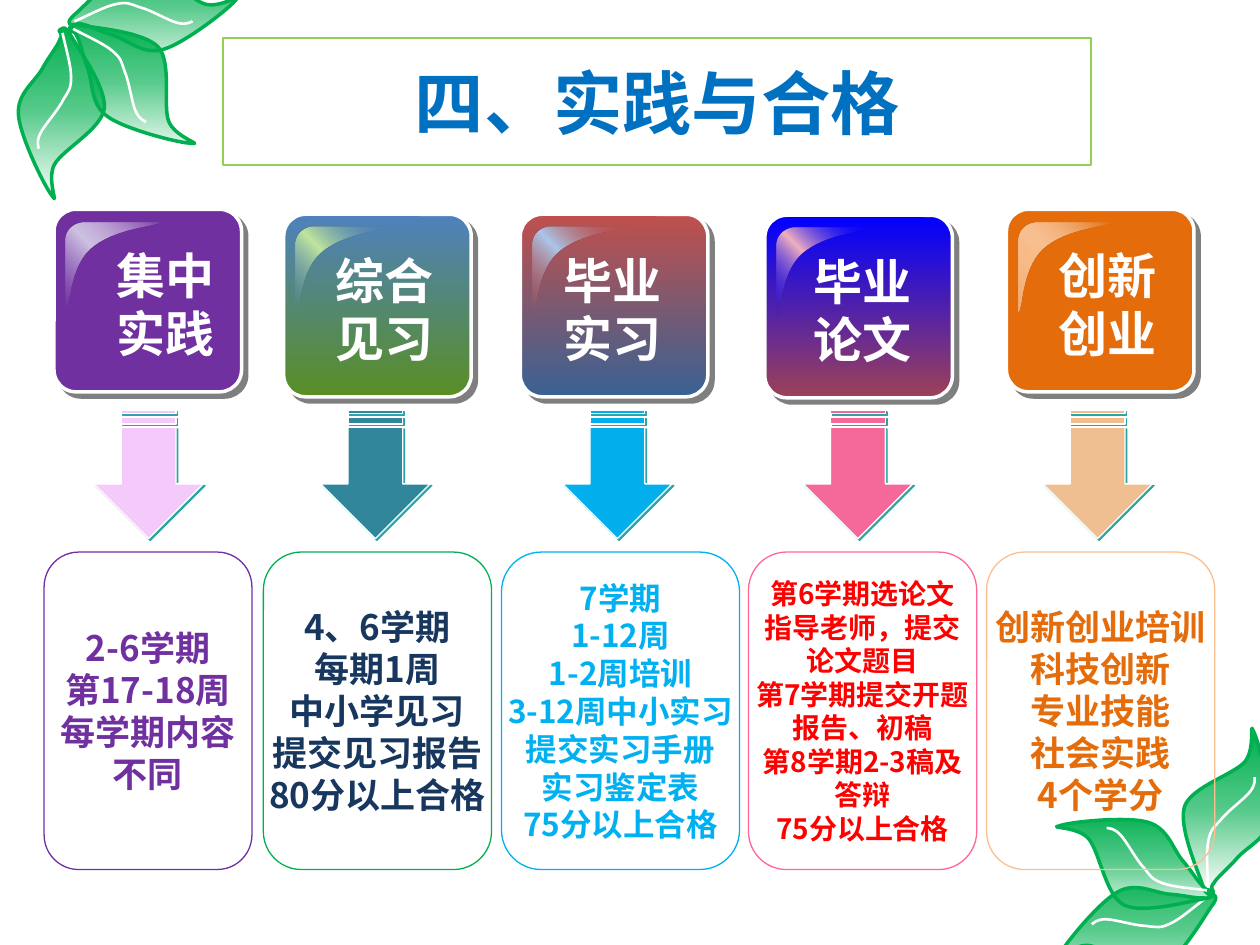
from dataclasses import dataclass
from typing import NamedTuple

import lxml.etree
import pptx
import pptx.dml.color
import pptx.enum.shapes
import pptx.enum.text
import pptx.oxml.ns
import pptx.util

Cm = pptx.util.Cm
Pt = pptx.util.Pt
RGBColor = pptx.dml.color.RGBColor
SHAPES = pptx.enum.shapes.MSO_SHAPE
qn = pptx.oxml.ns.qn

FONT = "Noto Sans CJK SC"
WHITE = RGBColor(0xFF, 0xFF, 0xFF)
BLACK = RGBColor(0x00, 0x00, 0x00)
GREEN = RGBColor(0x00, 0xB0, 0x50)
LIME = RGBColor(0x92, 0xD0, 0x50)
TITLE_BLUE = RGBColor(0x00, 0x70, 0xC0)
PURPLE = RGBColor(0x70, 0x30, 0xA0)
LILAC = RGBColor(0xB1, 0x97, 0xD2)
PALE_LILAC = RGBColor(0xCE, 0xC1, 0xE2)
ORCHID = RGBColor(0xFF, 0xCC, 0xFF)
STEEL = RGBColor(0x4F, 0x81, 0xBD)
MOSS = RGBColor(0x59, 0x8E, 0x25)
PALE_GREEN = RGBColor(0xC1, 0xE6, 0x9D)
TEAL = RGBColor(0x31, 0x85, 0x9C)
SHADOW_TEAL = RGBColor(0x29, 0xA3, 0xA3)
NAVY = RGBColor(0x17, 0x37, 0x5E)
BRICK = RGBColor(0xC0, 0x50, 0x4D)
DENIM = RGBColor(0x39, 0x62, 0x93)
PALE_BLUE = RGBColor(0xAA, 0xC7, 0xEA)
SKY = RGBColor(0x00, 0xB0, 0xF0)
BLUE = RGBColor(0x00, 0x00, 0xFF)
WINE = RGBColor(0x9D, 0x41, 0x57)
PALE_PINK = RGBColor(0xF0, 0xB0, 0xBF)
PINK = RGBColor(0xFF, 0x66, 0x99)
RED = RGBColor(0xFF, 0x00, 0x00)
ORANGE = RGBColor(0xE4, 0x6C, 0x0A)
PEACH = RGBColor(0xFA, 0xC0, 0x90)
PALE_PEACH = RGBColor(0xFC, 0xD5, 0xB5)


class Stop(NamedTuple):
    position: int
    color: RGBColor
    alpha: int = 100


class Curve(NamedTuple):
    start: tuple
    segments: list


class Leaf(NamedTuple):
    blade: tuple
    vein: tuple
    angle: float


@dataclass
class Column:
    label: list
    tile: tuple
    tile_stops: list
    gloss_stops: list
    label_left: float
    arrow_left: float
    arrow_color: RGBColor
    panel_left: float
    panel_width: float
    panel_line: RGBColor
    text_color: RGBColor
    text_size: int
    lines: list


BLADE = Curve((0.48, 3.28), [
    (0.38, 2.97, 0, 2.11, 0.13, 1.7), (0.28, 1.3, 1.12, 1.07, 1.35, 0.81),
    (1.57, 0.56, 1.45, -0.03, 1.52, 0.18), (1.63, 0.36, 1.91, 1.5, 1.85, 1.93),
    (1.8, 2.36, 1.4, 2.51, 1.19, 2.74), (0.99, 2.97, 0.79, 3.12, 0.71, 3.25),
    (0.61, 3.35, 0.71, 3.43, 0.69, 3.43), (0.64, 3.43, 0.56, 3.56, 0.48, 3.28)])
VEIN = Curve((0.03, 2.18), [
    (0.03, 1.83, 0, 1.5, 0.05, 1.27), (0.1, 1.04, 0.15, 1.02, 0.3, 0.86),
    (0.43, 0.69, 0.79, 0.43, 0.89, 0.3), (1.02, 0.15, 0.99, 0, 0.99, 0)])
GLOSS = Curve((0.38, 0), [
    (0.18, 0, 0, 0.15, 0, 0.36), (0, 0.84, 0, 1.32, 0, 1.8),
    (0.1, 1.83, 0.05, 0.94, 0.51, 0.53), (0.99, 0.1, 1.9, 0.08, 1.88, 0)])
LEAF_STOPS = [Stop(0, GREEN), Stop(50, GREEN, 65), Stop(100, GREEN, 0)]
LEAVES = [
    Leaf((0.25, 0.46), (0.51, 0.74), 167.8),
    Leaf((1.7, -0.15), (1.7, 0.43), 118.1),
    Leaf((2.08, -1.65), (2.18, -0.66), 66.1),
    Leaf((23.75, 14.55), (24.31, 15.67), 359.6),
    Leaf((21.95, 16.94), (22.66, 17.27), 233),
    Leaf((21.89, 15.6), (22.81, 16.23), 278.1),
]


def glow(edge: RGBColor, middle: RGBColor) -> list:
    return [Stop(0, edge, 0), Stop(50, middle), Stop(100, edge, 0)]


COLUMNS = [
    Column(["集中", "实践"], (1.09, 4.22), [Stop(0, PURPLE)],
           [Stop(2, LILAC, 0), Stop(50, PALE_LILAC), Stop(100, WHITE, 8)],
           2.08, 1.7, ORCHID, 0.89, 4.19, PURPLE, PURPLE, 20,
           ["2-6学期", "第17-18周", "每学期内容", "不同"]),
    Column(["综合", "见习"], (5.72, 4.32), [Stop(0, STEEL), Stop(100, MOSS)],
           glow(STEEL, PALE_GREEN), 6.5, 6.27, TEAL, 5.31, 4.6, GREEN, NAVY, 20,
           ["4、6学期", "每期1周", "中小学见习", "提交见习报告", "80分以上合格"]),
    Column(["毕业", "实习"], (10.49, 4.32), [Stop(0, BRICK), Stop(100, DENIM)],
           glow(BRICK, PALE_BLUE), 11.1, 11.15, SKY, 10.11, 4.8, SKY, SKY, 18,
           ["7学期", "1-12周", "1-2周培训", "3-12周中小实习", "提交实习手册",
            "实习鉴定表", "75分以上合格"]),
    Column(["毕业", "论文"], (15.42, 4.34), [Stop(0, BLUE), Stop(100, WINE)],
           glow(BLUE, PALE_PINK), 16.13, 16, PINK, 15.09, 4.6, PINK, RED, 16,
           ["第6学期选论文", "指导老师，提交", "论文题目", "第7学期提交开题",
            "报告、初稿", "第8学期2-3稿及", "答辩", "75分以上合格"]),
    Column(["创新", "创业"], (20.29, 4.22), [Stop(0, ORANGE)],
           [Stop(2, PALE_PEACH, 61), Stop(50, PEACH), Stop(100, WHITE, 0)],
           21.08, 20.83, PEACH, 19.89, 4.6, PEACH, ORANGE, 20,
           ["创新创业培训", "科技创新", "专业技能", "社会实践", "4个学分"]),
]


def apply(target, values: dict) -> None:
    for name, value in values.items():
        setattr(target, name, value)


def add_color(parent, color: RGBColor, alpha: int) -> None:
    node = lxml.etree.SubElement(parent, qn("a:srgbClr"), val=str(color))
    if alpha < 100:
        lxml.etree.SubElement(node, qn("a:alpha"), val=str(alpha * 1000))


def paint(shape, stops: list, angle: float = 90) -> None:
    shape.fill.background()
    if not stops:
        return
    if len(stops) == 1:
        fill = lxml.etree.Element(qn("a:solidFill"))
        add_color(fill, stops[0].color, stops[0].alpha)
    else:
        fill = lxml.etree.Element(qn("a:gradFill"), rotWithShape="1")
        stop_list = lxml.etree.SubElement(fill, qn("a:gsLst"))
        for stop in stops:
            node = lxml.etree.SubElement(stop_list, qn("a:gs"), pos=str(stop.position * 1000))
            add_color(node, stop.color, stop.alpha)
        lxml.etree.SubElement(fill, qn("a:lin"), ang=str(round(angle % 360 * 60000)), scaled="0")
    properties = shape.element.spPr
    properties.replace(properties.find(qn("a:noFill")), fill)


def outline(shape, color: RGBColor, width: float) -> None:
    shape.shadow.inherit = False
    shape.line.color.rgb = color
    shape.line.width = Pt(width)


def cast_shadow(shape, color: RGBColor, alpha: int, distance: float) -> None:
    effects = shape.element.spPr.find(qn("a:effectLst"))
    shadow = lxml.etree.SubElement(effects, qn("a:outerShdw"), dist=str(Pt(distance)),
                                   dir="2700000", algn="ctr", rotWithShape="0")
    add_color(shadow, color, alpha)


def add_preset(page, kind, left: float, top: float, width: float, height: float):
    return page.shapes.add_shape(kind, Cm(left), Cm(top), Cm(width), Cm(height))


def add_curve(page, curve: Curve, origin: tuple, closed: bool):
    knots = [curve.start] + [segment[4:] for segment in curve.segments]
    placed = [(Cm(origin[0] + x), Cm(origin[1] + y)) for x, y in knots]
    builder = page.shapes.build_freeform(*placed[0], scale=1.0)
    builder.add_line_segments(placed[1:], close=closed)
    shape = builder.convert_to_shape()
    shape.shadow.inherit = False
    left, top = (min(values) for values in zip(*knots))
    lines = list(shape.element.spPr.iter(qn("a:lnTo")))
    for line, segment in zip(lines, curve.segments):
        bend = lxml.etree.Element(qn("a:cubicBezTo"))
        for x, y in zip(segment[::2], segment[1::2]):
            lxml.etree.SubElement(bend, qn("a:pt"), x=str(Cm(x - left)), y=str(Cm(y - top)))
        line.getparent().replace(line, bend)
    return shape


def write(shape, lines: list, size: float, color: RGBColor, wrap: bool = False,
          anchor=pptx.enum.text.MSO_ANCHOR.MIDDLE) -> None:
    frame = shape.text_frame
    apply(frame, {"word_wrap": wrap, "vertical_anchor": anchor})
    for number, line in enumerate(lines):
        para = frame.add_paragraph() if number else frame.paragraphs[0]
        apply(para, {"alignment": pptx.enum.text.PP_ALIGN.CENTER,
                     "line_spacing": Pt(size * 1.2)})
        span = para.add_run()
        span.text = line
        span.font.color.rgb = color
        apply(span.font, {"name": FONT, "size": Pt(size), "bold": True})
        lxml.etree.SubElement(span.font._element, qn("a:ea"), typeface=FONT)


def draw_leaf(page, leaf: Leaf) -> None:
    blade = add_curve(page, BLADE, leaf.blade, True)
    paint(blade, LEAF_STOPS, 90 - leaf.angle)
    outline(blade, GREEN, 2)
    vein = add_curve(page, VEIN, leaf.vein, False)
    paint(vein, [])
    outline(vein, WHITE, 1.5)
    for part in (blade, vein):
        part.rotation = leaf.angle


def draw_column(page, column: Column) -> None:
    left, top = column.tile
    tile = add_preset(page, SHAPES.ROUNDED_RECTANGLE, left, top, 3.78, 3.68)
    tile.adjustments[0] = 0.12
    paint(tile, column.tile_stops)
    outline(tile, WHITE, 2)
    cast_shadow(tile, BLACK, 50, 4.2)

    gloss = add_curve(page, GLOSS, (left + 0.24, top + 0.26), True)
    paint(gloss, column.gloss_stops, 315)
    gloss.line.fill.background()

    label = page.shapes.add_textbox(Cm(column.label_left), Cm(top + 0.6), Cm(2.51), Cm(2.64))
    write(label, column.label, 28, WHITE, anchor=pptx.enum.text.MSO_ANCHOR.TOP)

    arrow = add_preset(page, SHAPES.STRIPED_RIGHT_ARROW, column.arrow_left, 8.46, 2.59, 2.21)
    arrow.rotation = 90
    paint(arrow, [Stop(0, column.arrow_color, 95)])
    outline(arrow, WHITE, 0.75)
    cast_shadow(arrow, SHADOW_TEAL, 100, 1.4)

    panel = add_preset(page, SHAPES.ROUNDED_RECTANGLE, column.panel_left, 11.13,
                       column.panel_width, 6.4)
    paint(panel, [])
    outline(panel, column.panel_line, 0.75)
    write(panel, column.lines, column.text_size, column.text_color)


def main() -> None:
    deck = pptx.Presentation()
    apply(deck, {"slide_width": Cm(25.4), "slide_height": Cm(19.05)})
    page = deck.slides.add_slide(deck.slide_layouts[6])
    for leaf in LEAVES:
        draw_leaf(page, leaf)
    title = add_preset(page, SHAPES.RECTANGLE, 4.5, 0.76, 17.5, 2.57)
    paint(title, [Stop(0, WHITE)])
    outline(title, LIME, 1)
    write(title, ["四、实践与合格"], 39.6, TITLE_BLUE, wrap=True)
    for column in COLUMNS:
        draw_column(page, column)
    deck.save("out.pptx")


if __name__ == "__main__":
    main()
